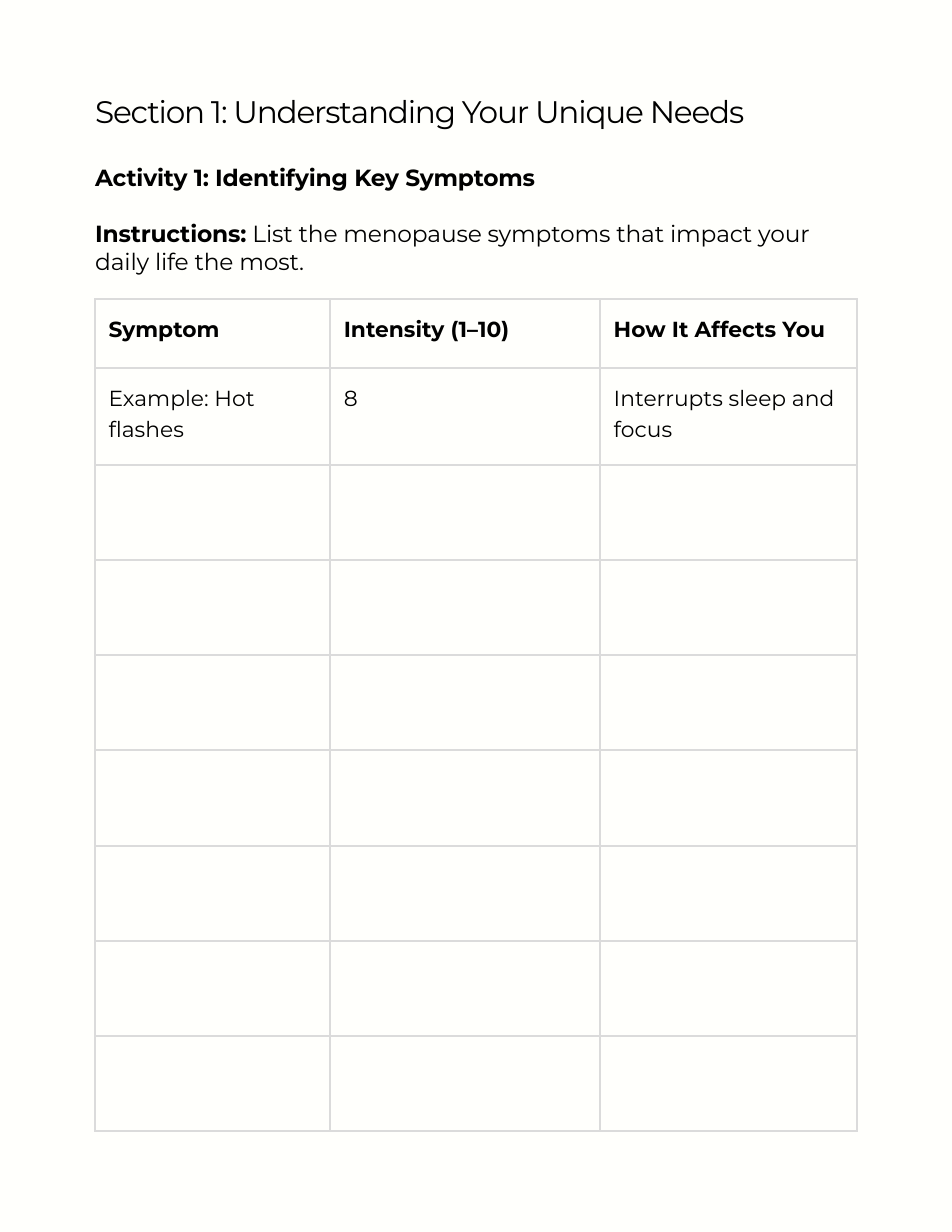
import pptx
import pptx.dml.color
import pptx.enum.text
import pptx.oxml
import pptx.oxml.ns
import pptx.util
from pptx.util import Inches

FONT = "Montserrat"
INK = "000000"
PAPER = "FFFFFC"
BORDER = "DBDBDB"
LEFT, WIDTH = 0.85, 6.8
COLUMN_WIDTHS = [2.1, 2.41, 2.29]
ROW_HEIGHTS = [0.62, 0.86] + [0.85] * 7
ROWS = [
    ["Symptom", "Intensity (1–10)", "How It Affects You"],
    ["Example: Hot flashes", "8", "Interrupts sleep and focus"],
]


def color(hex_string):
    return pptx.dml.color.RGBColor.from_string(hex_string)


def format_run(run, size, bold=False, spacing=0):
    """Style a run; spacing is the letter spacing in points."""
    run.font.name = FONT
    run.font.size = pptx.util.Pt(size)
    run.font.bold = bold
    run.font.color.rgb = color(INK)
    if spacing:
        run._r.get_or_add_rPr().set("spc", str(round(spacing * 100)))


def format_paragraph(paragraph, line_points, space_before=0):
    """Align left with exact line spacing, without bullet or indent."""
    paragraph.alignment = pptx.enum.text.PP_ALIGN.LEFT
    paragraph.line_spacing = pptx.util.Pt(line_points)
    paragraph.space_before = pptx.util.Pt(space_before)
    properties = paragraph._p.get_or_add_pPr()
    properties.set("marL", "0")
    properties.set("indent", "0")
    properties.append(pptx.oxml.parse_xml(f'<a:buNone {pptx.oxml.ns.nsdecls("a")}/>'))


def place_placeholder(shape, top, height):
    shape.left, shape.top = Inches(LEFT), Inches(top)
    shape.width, shape.height = Inches(WIDTH), Inches(height)
    frame = shape.text_frame
    frame.margin_left = frame.margin_right = frame.margin_top = frame.margin_bottom = 0
    frame.word_wrap = True
    frame.auto_size = pptx.enum.text.MSO_AUTO_SIZE.NONE
    frame.vertical_anchor = pptx.enum.text.MSO_ANCHOR.TOP
    return frame


def add_title(slide):
    frame = place_placeholder(slide.shapes.title, 0.91, 0.27)
    frame.text = "Section 1: Understanding Your Unique Needs"
    format_paragraph(frame.paragraphs[0], 18)
    format_run(frame.paragraphs[0].runs[0], 20, spacing=-0.8)


def add_activity(slide):
    frame = place_placeholder(slide.placeholders[1], 1.46, 0.93)
    heading = frame.paragraphs[0]
    heading.text = "Activity 1: Identifying Key Symptoms"
    instructions = frame.add_paragraph()
    instructions.text = "Instructions:"
    detail = instructions.add_run()
    detail.text = " List the menopause symptoms that impact your daily life the most."
    format_paragraph(heading, 18)
    format_paragraph(instructions, 18, space_before=18)
    for run in (heading.runs[0], instructions.runs[0], detail):
        format_run(run, 15, bold=run is not detail, spacing=-0.1)


def format_cell(cell):
    cell.margin_left = cell.margin_right = Inches(0.12)
    cell.margin_top = cell.margin_bottom = Inches(0.12)
    properties = cell._tc.get_or_add_tcPr()
    for side in ("lnL", "lnR", "lnT", "lnB"):
        properties.append(pptx.oxml.parse_xml(
            f'<a:{side} {pptx.oxml.ns.nsdecls("a")} w="{pptx.util.Pt(1.5)}">'
            f'<a:solidFill><a:srgbClr val="{BORDER}"/></a:solidFill></a:{side}>'))
    cell.fill.background()


def add_symptom_table(slide):
    frame = slide.shapes.add_table(
        len(ROW_HEIGHTS), len(COLUMN_WIDTHS), Inches(LEFT), Inches(2.67),
        Inches(WIDTH), Inches(sum(ROW_HEIGHTS)))
    table = frame.table
    table.horz_banding = False
    for column, width in zip(table.columns, COLUMN_WIDTHS):
        column.width = Inches(width)
    for row, height in zip(table.rows, ROW_HEIGHTS):
        row.height = Inches(height)
    for cell in table.iter_cells():
        format_cell(cell)
    for row_index, texts in enumerate(ROWS):
        for column_index, text in enumerate(texts):
            paragraph = table.cell(row_index, column_index).text_frame.paragraphs[0]
            paragraph.text = text
            format_paragraph(paragraph, 19.6)
            format_run(paragraph.runs[0], 14, bold=row_index == 0)


def main():
    presentation = pptx.Presentation()
    presentation.slide_width, presentation.slide_height = Inches(8.5), Inches(11)
    slide = presentation.slides.add_slide(presentation.slide_layouts[1])
    slide.background.fill.solid()
    slide.background.fill.fore_color.rgb = color(PAPER)
    add_title(slide)
    add_activity(slide)
    add_symptom_table(slide)
    presentation.save("out.pptx")


if __name__ == "__main__":
    main()
